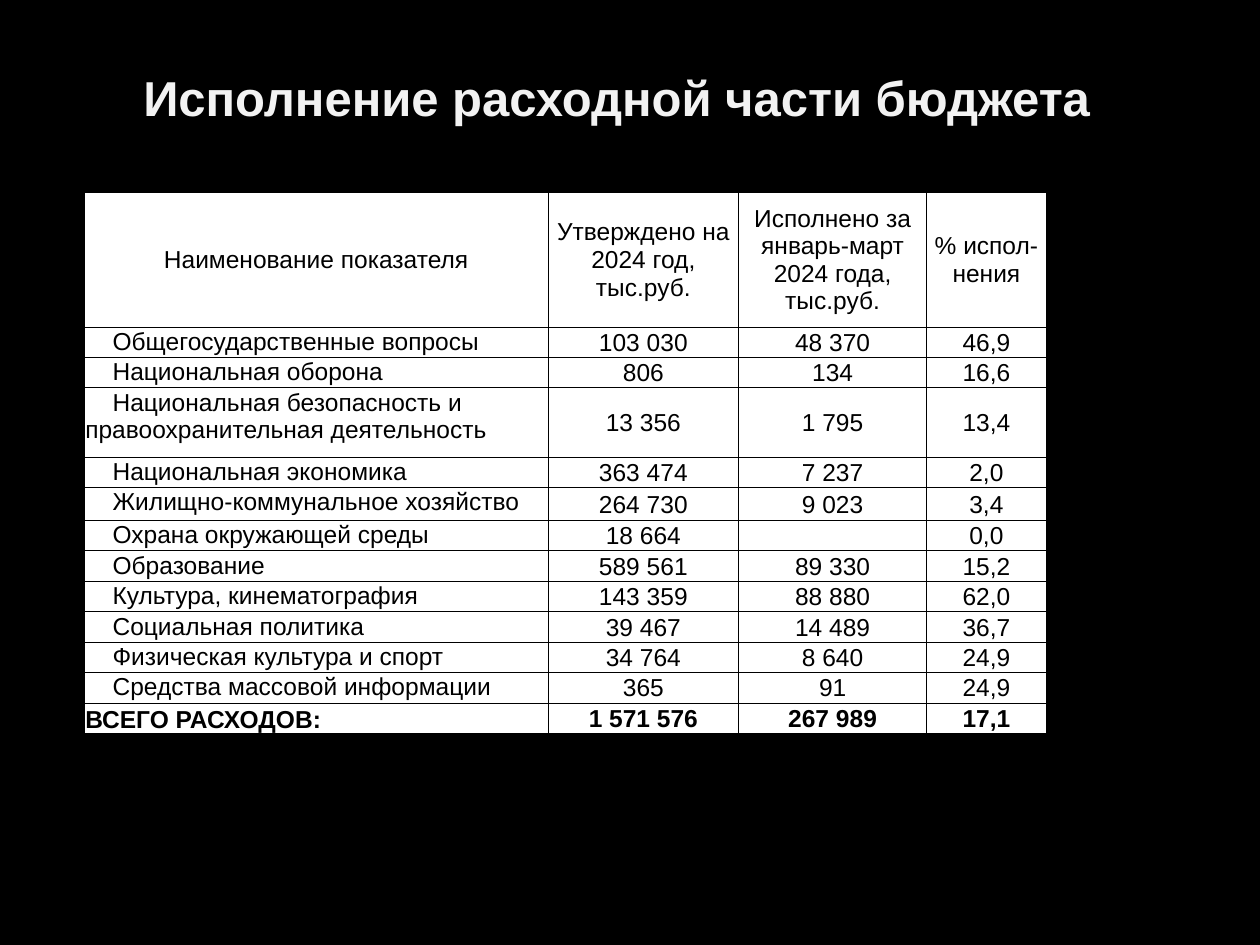
"""Build a slide with a table of budget spending."""
from lxml.etree import SubElement
from pptx import Presentation
from pptx.dml.color import RGBColor
from pptx.enum.text import MSO_ANCHOR, PP_ALIGN
from pptx.oxml.ns import qn
from pptx.util import Cm, Pt

BLACK = RGBColor(0x00, 0x00, 0x00)
WHITE = RGBColor(0xFF, 0xFF, 0xFF)
PALE = RGBColor(0xF2, 0xF2, 0xF2)

TITLE = "Исполнение расходной части бюджета"
HEAD = ("Наименование показателя", "Утверждено на 2024 год, тыс.руб.",
        "Исполнено за январь-март 2024 года, тыс.руб.", "% испол-нения")
ITEMS = [
    ("Общегосударственные вопросы", "103 030", "48 370", "46,9"),
    ("Национальная оборона", "806", "134", "16,6"),
    ("Национальная безопасность и правоохранительная деятельность",
     "13 356", "1 795", "13,4"),
    ("Национальная экономика", "363 474", "7 237", "2,0"),
    ("Жилищно-коммунальное хозяйство", "264 730", "9 023", "3,4"),
    ("Охрана окружающей среды", "18 664", "", "0,0"),
    ("Образование", "589 561", "89 330", "15,2"),
    ("Культура, кинематография", "143 359", "88 880", "62,0"),
    ("Социальная политика", "39 467", "14 489", "36,7"),
    ("Физическая культура и спорт", "34 764", "8 640", "24,9"),
    ("Средства массовой информации", "365", "91", "24,9"),
]
TOTAL = ("ВСЕГО РАСХОДОВ:", "1 571 576", "267 989", "17,1")
ROWS = [HEAD, *ITEMS, TOTAL]
LAST = len(ROWS) - 1

WIDTHS = (9.35, 3.84, 3.79, 2.41)
LOW = 0.57
TALL = {0: 2.72, 3: 1.4, 5: 0.66}
HEIGHTS = [TALL.get(row, LOW) for row in range(len(ROWS))]


def write(frame, text, size=14, color=BLACK, bold=False,
          align=PP_ALIGN.CENTER, indent=0):
    para = frame.paragraphs[0]
    para.alignment = align
    if indent:
        para._p.get_or_add_pPr().set("indent", str(Cm(indent)))
    if not text:
        SubElement(para._p, qn("a:endParaRPr"), sz=str(size * 100))
        return
    run = para.add_run()
    run.text = text
    font = run.font
    font.name, font.size, font.bold = "Arial", Pt(size), bold
    font.color.rgb = color


def border(cell):
    props = cell._tc.get_or_add_tcPr()
    for spot, side in enumerate(("lnL", "lnR", "lnT", "lnB")):
        line = SubElement(props, qn(f"a:{side}"), w=str(Pt(0.5)))
        fill = SubElement(line, qn("a:solidFill"))
        SubElement(fill, qn("a:srgbClr"), val=str(BLACK))
        props.insert(spot, line)


def style(cell, anchor):
    cell.fill.solid()
    cell.fill.fore_color.rgb = WHITE
    cell.vertical_anchor = anchor
    cell.margin_left = cell.margin_right = cell.margin_top = Cm(0.02)
    cell.margin_bottom = 0
    border(cell)


def main():
    deck = Presentation()
    deck.slide_width, deck.slide_height = Cm(25.4), Cm(19.05)
    slide = deck.slides.add_slide(deck.slide_layouts[6])
    slide.background.fill.solid()
    slide.background.fill.fore_color.rgb = BLACK

    frame = slide.shapes.add_textbox(
        Cm(1), Cm(0.74), Cm(22.86), Cm(2.44)).text_frame
    frame.word_wrap = True
    frame.vertical_anchor = MSO_ANCHOR.MIDDLE
    write(frame, TITLE, size=28, color=PALE, bold=True)

    table = slide.shapes.add_table(
        len(ROWS), len(WIDTHS), Cm(1.7), Cm(3.87),
        Cm(sum(WIDTHS)), Cm(sum(HEIGHTS))).table
    table.horz_banding = False
    for col, width in zip(table.columns, WIDTHS):
        col.width = Cm(width)
    for row, height in zip(table.rows, HEIGHTS):
        row.height = Cm(height)

    for row, texts in enumerate(ROWS):
        for col, text in enumerate(texts):
            cell = table.cell(row, col)
            label = col == 0 and row > 0
            item = label and row < LAST
            anchor = MSO_ANCHOR.MIDDLE
            if label:
                anchor = MSO_ANCHOR.TOP if item else MSO_ANCHOR.BOTTOM
            style(cell, anchor)
            write(cell.text_frame, text, bold=row == LAST,
                  align=PP_ALIGN.LEFT if label else PP_ALIGN.CENTER,
                  indent=0.55 if item else 0)

    deck.save("out.pptx")


if __name__ == "__main__":
    main()
